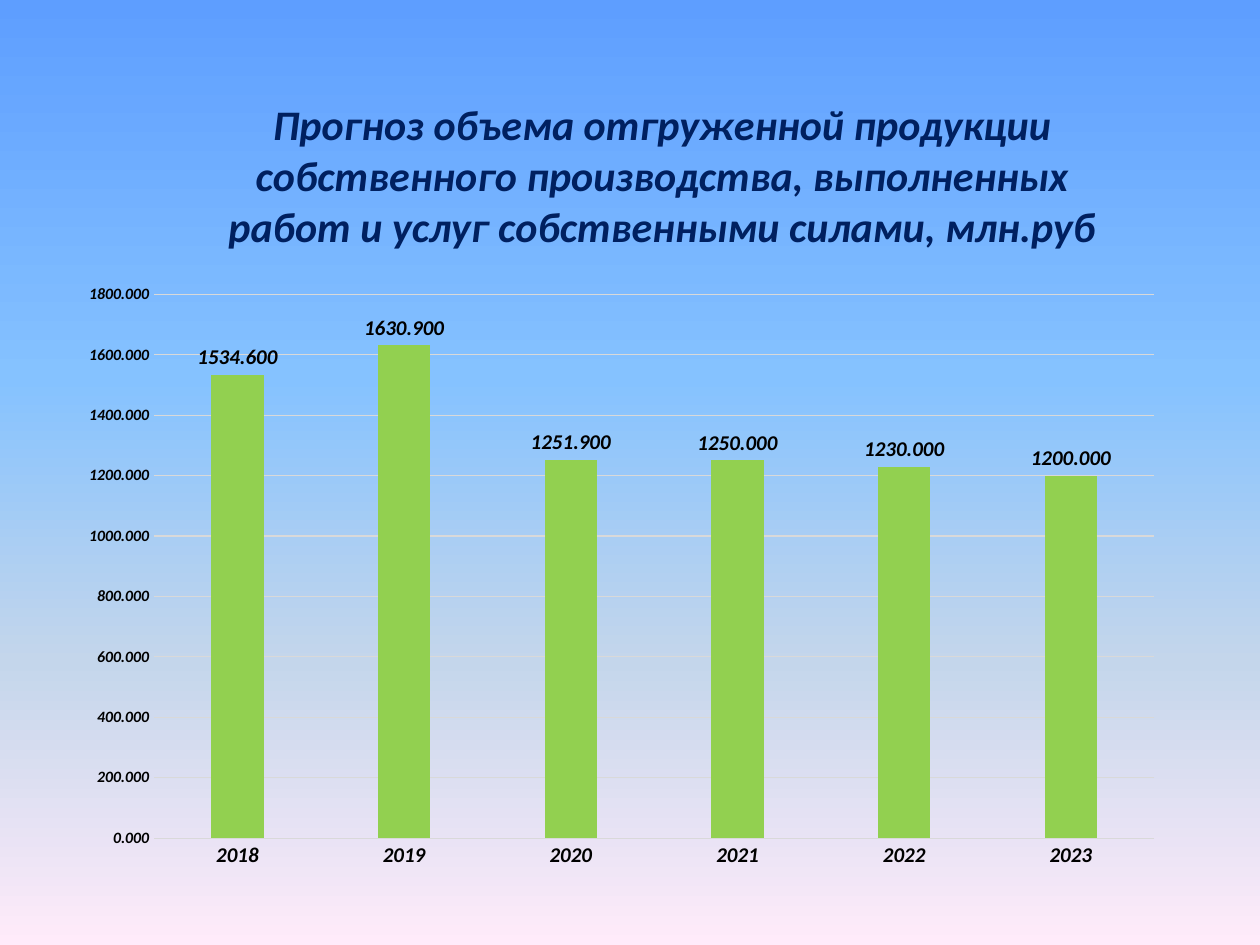
from lxml import etree
from pptx import Presentation
from pptx.chart.data import CategoryChartData
from pptx.dml.color import RGBColor
from pptx.enum.chart import XL_CHART_TYPE, XL_LABEL_POSITION, XL_TICK_MARK
from pptx.oxml.ns import qn
from pptx.util import Inches, Pt

COLUMN = XL_CHART_TYPE.COLUMN_CLUSTERED
OUTSIDE = XL_LABEL_POSITION.OUTSIDE_END
NO_TICK = XL_TICK_MARK.NONE

TITLE = ("Прогноз объема отгруженной продукции собственного производства, "
         "выполненных работ и услуг собственными силами, млн.руб")
OUTPUT = {"2018": 1534.6, "2019": 1630.9, "2020": 1251.9,
          "2021": 1250, "2022": 1230, "2023": 1200}
FORMAT = "0.000"
FRAME = (0.43, 0.44, 8.82, 6.54)
TITLE_AT = {"x": 0.15, "y": 0.04}
PLOT_AT = {"x": 0.09, "y": 0.29, "w": 0.9, "h": 0.66}

THEME = {
    "font": "Calibri",
    "sky": [(0, "5E9EFF"), (40, "85C2FF"), (70, "C4D6EB"), (100, "FFEBFA")],
    "title": "002060", "text": "000000", "bar": "92D050", "grid": "D9D9D9",
    "title_size": 24, "label_size": 12, "scale_size": 9, "line": 0.75,
}


def style(font, size, color=THEME["text"]):
    font.name = THEME["font"]
    font.size = Pt(size)
    font.bold = font.italic = True
    font.color.rgb = RGBColor.from_string(color)


def rule(line):
    line.color.rgb = RGBColor.from_string(THEME["grid"])
    line.width = Pt(THEME["line"])


def place(parent, index, spots, inner=False):
    """Fix a chart part at fractions of the chart's size."""
    for old in parent.findall(qn("c:layout")):
        parent.remove(old)
    layout = etree.Element(qn("c:layout"))
    manual = etree.SubElement(layout, qn("c:manualLayout"))
    parts = [("layoutTarget", "inner")] if inner else []
    parts += [(f"{key}Mode", "edge") for key in "xy"]
    parts += spots.items()
    for tag, val in parts:
        etree.SubElement(manual, qn(f"c:{tag}"), val=str(val))
    parent.insert(index, layout)


def paint(slide):
    """Fill the background from top to bottom with the sky stops."""
    fill = slide.background.fill
    fill.gradient()
    grad = slide.background._cSld.find(".//" + qn("a:gradFill"))
    stops = grad.find(qn("a:gsLst"))
    for old in list(stops):
        stops.remove(old)
    for spot, color in THEME["sky"]:
        stop = etree.SubElement(stops, qn("a:gs"), pos=str(spot * 1000))
        etree.SubElement(stop, qn("a:srgbClr"), val=color)
    grad.find(qn("a:lin")).set("ang", "5400000")


def add_bars(slide):
    data = CategoryChartData(number_format=FORMAT)
    data.categories = list(OUTPUT)
    data.add_series("Series 1", list(OUTPUT.values()))
    box = [Inches(n) for n in FRAME]
    chart = slide.shapes.add_chart(COLUMN, *box, data).chart
    chart.has_legend = False
    chart.font.name = THEME["font"]
    chart.font.size = Pt(10)

    title = chart.chart_title
    run = title.text_frame.paragraphs[0].add_run()
    run.text = TITLE
    style(run.font, THEME["title_size"], THEME["title"])
    place(title._element, 1, TITLE_AT)
    place(chart._chartSpace.chart.plotArea, 0, PLOT_AT, inner=True)

    years, scale = chart.category_axis, chart.value_axis
    for axis, size in ((years, "label_size"), (scale, "scale_size")):
        axis.major_tick_mark = axis.minor_tick_mark = NO_TICK
        style(axis.tick_labels.font, THEME[size])
    rule(years.format.line)
    scale.format.line.fill.background()
    rule(scale.major_gridlines.format.line)
    scale.minimum_scale, scale.maximum_scale, scale.major_unit = 0, 1800, 200
    scale.tick_labels.number_format = FORMAT
    scale.tick_labels.number_format_is_linked = False

    plot = chart.plots[0]
    plot.vary_by_categories = False
    plot.gap_width, plot.overlap = 219, -27
    bars = plot.series[0]
    bars.format.fill.solid()
    bars.format.fill.fore_color.rgb = RGBColor.from_string(THEME["bar"])
    labels = bars.data_labels
    labels.show_value = True
    labels.position = OUTSIDE
    labels.number_format = FORMAT
    labels.number_format_is_linked = False
    style(labels.font, THEME["label_size"])


def main():
    deck = Presentation()
    deck.slide_width, deck.slide_height = Inches(10), Inches(7.5)
    slide = deck.slides.add_slide(deck.slide_layouts[6])
    paint(slide)
    add_bars(slide)
    deck.save("out.pptx")


if __name__ == "__main__":
    main()
